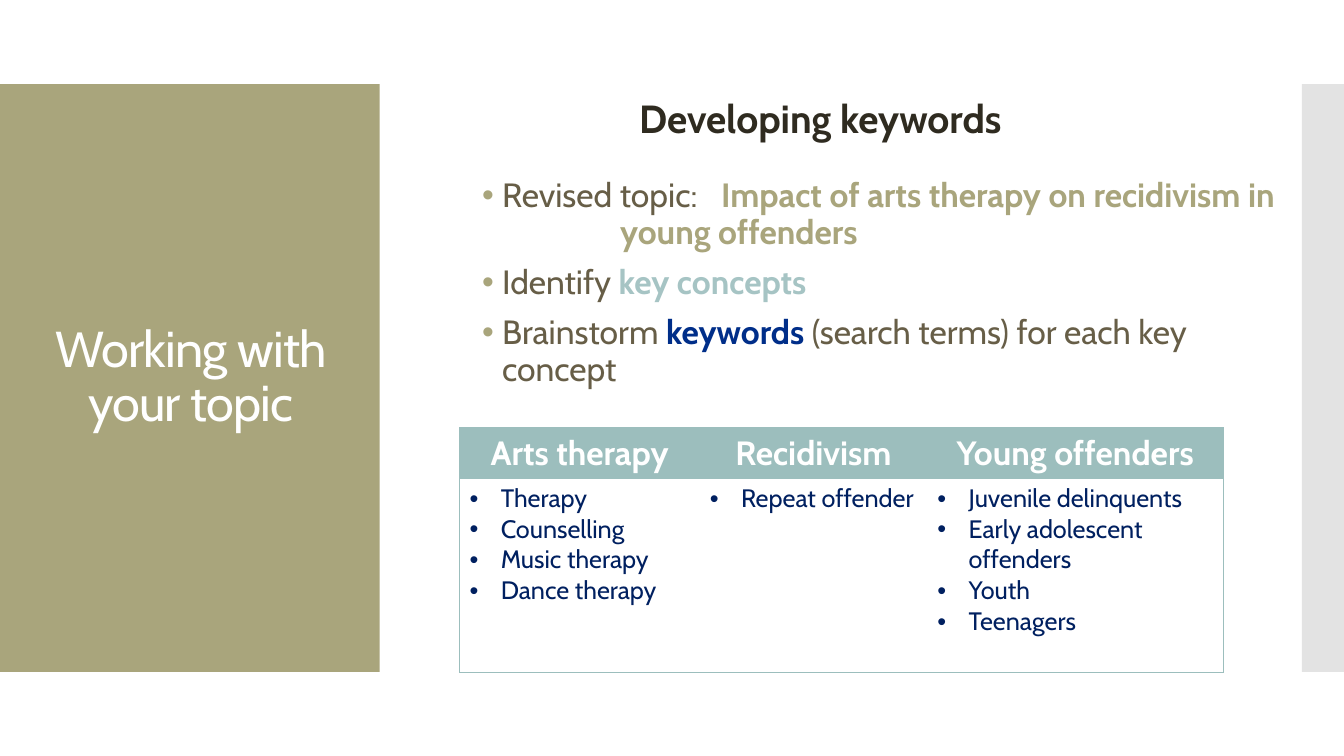
"""Build the slide on developing keywords for a research topic."""
import pptx
import pptx.dml.color
import pptx.enum.shapes
import pptx.enum.text
import pptx.oxml
import pptx.oxml.ns
import pptx.util
from lxml import etree

THEME = {
    "font": "Cabin",
    "olive": "A9A57C", "grey": "C8C8C8", "white": "FFFFFF", "dark": "2F2B20",
    "brown": "675E47", "mist": "A6C4C4", "blue": "002E89", "teal": "9CBEBD",
    "navy": "002060",
    "title": 36, "head": 28, "list": 24, "cell": 18,
}
ALIGN = pptx.enum.text.PP_ALIGN
ANCHOR = pptx.enum.text.MSO_ANCHOR
RGB = pptx.dml.color.RGBColor.from_string
INCH = pptx.util.Inches(1)
qn = pptx.oxml.ns.qn

deck = pptx.Presentation()
deck.slide_width = pptx.util.Inches(13.333)
deck.slide_height = pptx.util.Inches(7.5)
UNIT = deck.slide_height / 90
slide = deck.slides.add_slide(deck.slide_layouts[6])


def add_run(para, text, size, color, bold=False, space=0):
    run = para.add_run()
    run.text = text
    run.font.name = THEME["font"]
    run.font.size = pptx.util.Pt(THEME[size])
    run.font.bold = bold
    run.font.color.rgb = RGB(THEME[color])
    if space:
        run._r.get_or_add_rPr().set("spc", str(space))


def indent(para, left, hang=0, color=None):
    props = para._p.get_or_add_pPr()
    props.set("marL", str(int(left * INCH)))
    props.set("indent", str(int(-hang * INCH)))
    if hang:
        tint = etree.SubElement(props, qn("a:buClr"))
        etree.SubElement(tint, qn("a:srgbClr")).set("val", THEME[color])
        etree.SubElement(props, qn("a:buFont")).set("typeface", "Arial")
        etree.SubElement(props, qn("a:buChar")).set("char", "•")


for left, width, color in [(0, 45.2, "olive"), (155, 5, "grey")]:
    panel = slide.shapes.add_shape(
        pptx.enum.shapes.MSO_SHAPE.RECTANGLE,
        *[int(n * UNIT) for n in (left, 10, width, 70)])
    panel.shadow.inherit = False
    panel.fill.solid()
    panel.fill.fore_color.rgb = RGB(THEME[color])
    panel.line.fill.background()
tint = panel._element.spPr.find(".//" + qn("a:srgbClr"))
etree.SubElement(tint, qn("a:alpha")).set("val", "50000")

frames = []
for place, anchor in [((3.4, 14.8, 38.6, 60.4), ANCHOR.MIDDLE),
                      ((64.3, 11.3, 66.7, 7.1), ANCHOR.TOP),
                      ((56.2, 21.6, 97.6, 25.9), ANCHOR.MIDDLE)]:
    box = slide.shapes.add_textbox(*[int(n * UNIT) for n in place])
    box.text_frame.word_wrap = True
    box.text_frame.vertical_anchor = anchor
    frames.append(box.text_frame)
title, head, body = frames

for frame, text, size, color, bold, space in [
        (title, "Working with your topic", "title", "white", False, -60),
        (head, "Developing keywords", "head", "dark", True, 0)]:
    para = frame.paragraphs[0]
    para.alignment = ALIGN.CENTER
    para.line_spacing = 0.9
    add_run(para, text, size, color, bold, space)

body.margin_bottom = pptx.util.Inches(0.18)
points = [
    (0.2, 0.2, 10, [("Revised topic:", "brown", False, 0),
                    (" ", "brown", False, 1150),
                    ("Impact of arts therapy on recidivism in", "olive", True, 0)]),
    (1.37, 0, 0, [("young offenders", "olive", True, 0)]),
    (0.2, 0.2, 10, [("Identify ", "brown", False, 0),
                    ("key concepts", "mist", True, 0)]),
    (0.2, 0.2, 10, [("Brainstorm ", "brown", False, 0),
                    ("keywords ", "blue", True, 0),
                    ("(search terms) for each key concept", "brown", False, 0)]),
]
for i, (left, hang, before, runs) in enumerate(points):
    para = body.add_paragraph() if i else body.paragraphs[0]
    para.line_spacing = 0.9
    para.space_before = pptx.util.Pt(before)
    indent(para, left, hang, "olive")
    for text, color, bold, space in runs:
        add_run(para, text, "list", color, bold, space)

terms = {
    "Arts therapy": ["Therapy", "Counselling", "Music therapy", "Dance therapy"],
    "Recidivism": ["Repeat offender"],
    "Young offenders": ["Juvenile delinquents", "Early adolescent offenders",
                        "Youth", "Teenagers"],
}
widths, heights = (28.6, 27.1, 35.2), (6, 23.2)
table = slide.shapes.add_table(
    2, 3, *[int(n * UNIT) for n in (54.7, 50.9, sum(widths), sum(heights))]).table
for col, width in zip(table.columns, widths):
    col.width = int(width * UNIT)
for row, height in zip(table.rows, heights):
    row.height = int(height * UNIT)

for c, (topic, words) in enumerate(terms.items()):
    for r, lines in enumerate([[topic], words]):
        cell = table.cell(r, c)
        props = cell._tc.get_or_add_tcPr()
        for side, shown in [("L", c == 0), ("R", c == 2), ("T", True), ("B", r == 1)]:
            edge = etree.SubElement(props, qn("a:ln" + side))
            edge.set("w", str(pptx.util.Pt(0.75)))
            paint = etree.SubElement(edge, qn("a:solidFill" if shown else "a:noFill"))
            if shown:
                etree.SubElement(paint, qn("a:srgbClr")).set("val", THEME["teal"])
        if r == 0:
            cell.fill.solid()
            cell.fill.fore_color.rgb = RGB(THEME["teal"])
        else:
            cell.fill.background()
        for i, text in enumerate(lines):
            frame = cell.text_frame
            para = frame.add_paragraph() if i else frame.paragraphs[0]
            if r == 0:
                para.alignment = ALIGN.CENTER
                add_run(para, text, "list", "white", True)
            else:
                indent(para, 0.31, 0.31, "navy")
                add_run(para, text, "cell", "navy")

deck.save("out.pptx")
